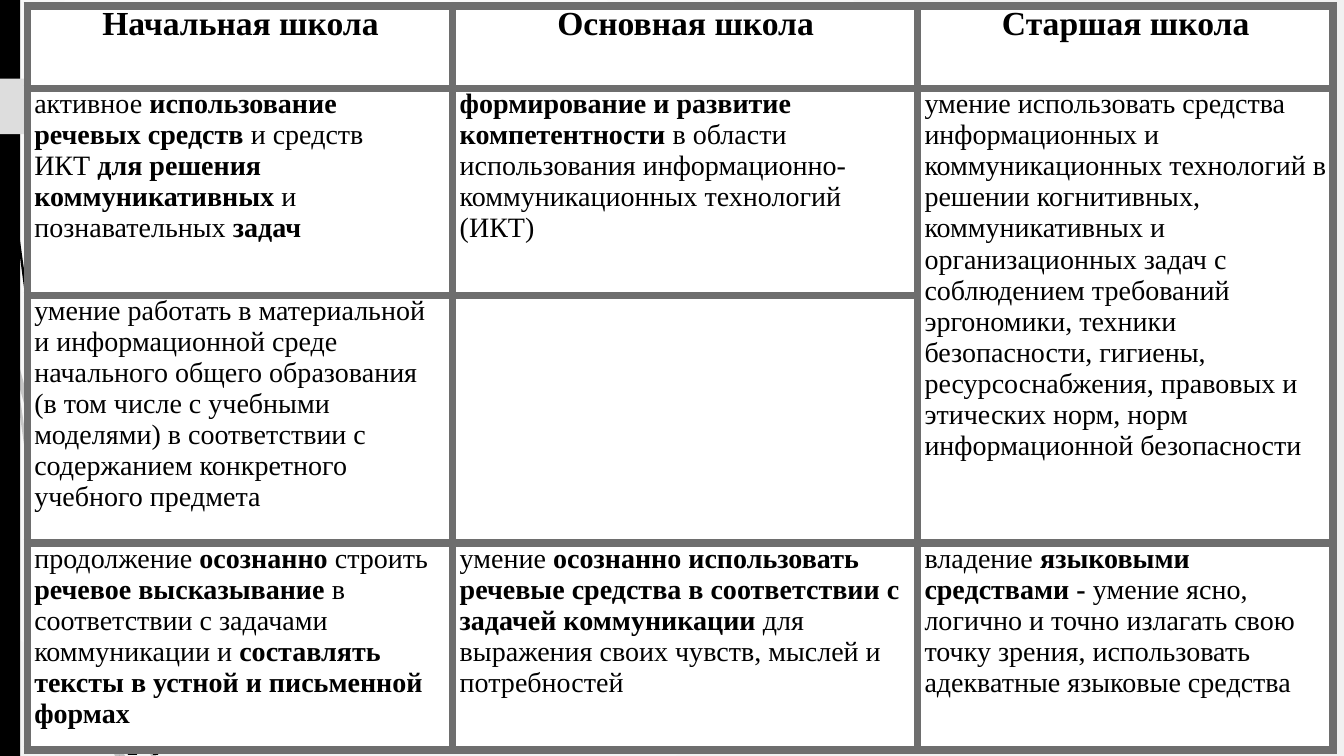
import pptx
import pptx.dml.color
import pptx.enum.shapes
import pptx.enum.text
import pptx.oxml
import pptx.oxml.ns
import pptx.util
from lxml import etree

Inches, Pt, qn = pptx.util.Inches, pptx.util.Pt, pptx.oxml.ns.qn
SHAPE = pptx.enum.shapes.MSO_SHAPE
ALIGN = pptx.enum.text.PP_ALIGN
W, H = 13.33, 7.5
FONT = "Times New Roman"
BLACK, WHITE, GRAY, LIGHT, EDGE = "000000", "FFFFFF", "6E6E6E", "DDDDDD", "F1F1F1"

COLS = [4.22, 4.61, 4.12]
ROWS = [0.82, 2.05, 2.46, 2.05]
# "*" switches bold on and off, "~" is a no-break space
CELLS = [
    ["*Начальная школа*", "*Основная школа*", "*Старшая школа*"],
    ["активное~*использование речевых средств~*и средств ИКТ~"
     "*для решения коммуникативных*~и познавательных~*задач*",
     "*формирование и развитие компетентности*~в области использования "
     "информационно-коммуникационных технологий (ИКТ)",
     "умение использовать средства информационных и коммуникационных "
     "технологий в решении когнитивных, коммуникативных и организационных "
     "задач с соблюдением требований эргономики, техники безопасности, "
     "гигиены, ресурсоснабжения, правовых и этических норм, норм "
     "информационной безопасности"],
    ["умение работать в материальной и информационной среде начального "
     "общего образования (в том числе с учебными моделями) в соответствии "
     "с содержанием конкретного учебного предмета", "", ""],
    ["продолжение~*осознанно*~строить~*речевое высказывание*~в соответствии "
     "с задачами коммуникации и~*составлять тексты в устной и письменной формах*",
     "умение~*осознанно использовать речевые средства в соответствии с "
     "задачей коммуникации~*для выражения своих чувств, мыслей и потребностей",
     "владение~*языковыми средствами -*~умение ясно, логично и точно "
     "излагать свою точку зрения, использовать адекватные языковые средства"],
]

# Stems that show around the table: opacity in percent, outline
STEMS = [
    (20, [(0.58, 5.22), (0.84, 5.99), (0.85, 5.86), (0.62, 5.2), (0.14, 3.45),
          (0.17, 3.76)]),
    (20, [(0.92, 6.07), (0.88, 5.96), (0.88, 6.1), (1.23, 6.94), (1.5, 7.5),
          (1.55, 7.5), (1.27, 6.92)]),
    (20, [(1.19, 7.5), (1.24, 7.5), (1.05, 7.11)]),
    (20, [(0.93, 6.83), (0.7, 6.19), (0.31, 4.69), (0.17, 3.76), (0.11, 3.5),
          (0.28, 4.7), (0.65, 6.21), (0.92, 6.93), (1.01, 7.14), (0.99, 7.07)]),
    (20, [(1.01, 7.14), (1.14, 7.5), (1.19, 7.5)]),
    (20, [(0.96, 6.92), (0.93, 6.83), (0.99, 7.07), (1.01, 7.14), (1.19, 7.5),
          (1.05, 7.11)]),
    (100, [(0.07, 1.1), (0.17, 2.33), (0.33, 3.55), (0.56, 4.77), (0.57, 4.81),
           (0.55, 4.53), (0.36, 3.55), (0.19, 2.32), (0.08, 1.09),
           (0.05, 0.48), (0.04, 0), (0.03, 0), (0.04, 0.48)]),
    (100, [(1.13, 6.49), (1.1, 6.41), (1.11, 6.56), (1.32, 7.08), (1.52, 7.49),
           (1.57, 7.49), (1.36, 7.06)]),
    (100, [(1.33, 7.49), (1.36, 7.49), (1.22, 7.19)]),
    (100, [(1.17, 7.22), (1.27, 7.49), (1.31, 7.49)]),
    (100, [(1.16, 7.06), (1.1, 6.91), (1.16, 7.17), (1.17, 7.22), (1.3, 7.49),
           (1.33, 7.49), (1.22, 7.19)]),
]


def rgb(color):
    return pptx.dml.color.RGBColor.from_string(color)


def paint(sp, color, opacity=100):
    sp.shadow.inherit = False
    sp.fill.solid()
    sp.fill.fore_color.rgb = rgb(color)
    sp.line.fill.background()
    if opacity < 100:
        clr = sp._element.spPr.find(qn("a:solidFill"))[0]
        etree.SubElement(clr, qn("a:alpha"), val=str(opacity * 1000))


def add_background(slide):
    """Radial gradient from white to a pale grey."""
    fill = slide.background.fill
    fill.gradient()
    for stop, color in zip(fill.gradient_stops, (WHITE, EDGE)):
        stop.color.rgb = rgb(color)
    grad = slide._element.find(".//" + qn("a:gradFill"))
    grad.replace(grad.find(qn("a:lin")), pptx.oxml.parse_xml(
        f'<a:path {pptx.oxml.ns.nsdecls("a")} path="circle">'
        '<a:fillToRect l="50000" t="50000" r="100000" b="100000"/></a:path>'))


def add_side_decor(slide, left, top, height):
    for opacity, points in STEMS:
        pts = [(Inches(left + x), Inches(top + y)) for x, y in points]
        builder = slide.shapes.build_freeform(*pts[0])
        builder.add_line_segments(pts[1:])
        paint(builder.convert_to_shape(), BLACK, opacity)
    for kind, y, w, h, color in ((SHAPE.RECTANGLE, 0, 0.2, height, BLACK),
                                 (SHAPE.PENTAGON, 0.78, 1.74, 0.55, LIGHT)):
        sp = slide.shapes.add_shape(kind, Inches(left), Inches(top + y),
                                    Inches(w), Inches(h))
        paint(sp, color)


def write_text(cell, text, size=20, align=ALIGN.LEFT, color=BLACK):
    p = cell.text_frame.paragraphs[0]
    p.alignment = align
    for i, part in enumerate(text.replace("~", chr(160)).split("*")):
        if part:
            r = p.add_run()
            r.text = part
            r.font.name, r.font.size, r.font.bold = FONT, Pt(size), i % 2 == 1
            r.font.color.rgb = rgb(color)


def frame_cell(cell, color=GRAY, width=6):
    cell.fill.solid()
    cell.fill.fore_color.rgb = rgb(WHITE)
    cell.margin_left, cell.margin_right = Inches(0.07), Inches(0.06)
    cell.margin_top = cell.margin_bottom = 0
    for i, side in enumerate("LRTB"):
        cell._tc.get_or_add_tcPr().insert(i, pptx.oxml.parse_xml(
            f'<a:ln{side} {pptx.oxml.ns.nsdecls("a")} w="{Pt(width)}">'
            f'<a:solidFill><a:srgbClr val="{color}"/></a:solidFill></a:ln{side}>'))


def add_school_table(slide, left, top):
    table = slide.shapes.add_table(
        len(ROWS), len(COLS), Inches(left), Inches(top),
        Inches(sum(COLS)), Inches(sum(ROWS))).table
    table.first_row = table.horz_banding = False
    for col, width in zip(table.columns, COLS):
        col.width = Inches(width)
    for row, height in zip(table.rows, ROWS):
        row.height = Inches(height)
    for i, texts in enumerate(CELLS):
        for j, text in enumerate(texts):
            cell = table.cell(i, j)
            frame_cell(cell)
            if i == 0:
                write_text(cell, text, size=24, align=ALIGN.CENTER)
            else:
                write_text(cell, text)
    table.cell(1, 2).merge(table.cell(2, 2))


def main():
    prs = pptx.Presentation()
    prs.slide_width, prs.slide_height = Inches(W), Inches(H)
    slide = prs.slides.add_slide(prs.slide_layouts[6])
    add_background(slide)
    add_side_decor(slide, 0, 0, H)
    add_school_table(slide, 0.27, 0.06)
    prs.save("out.pptx")


if __name__ == "__main__":
    main()
